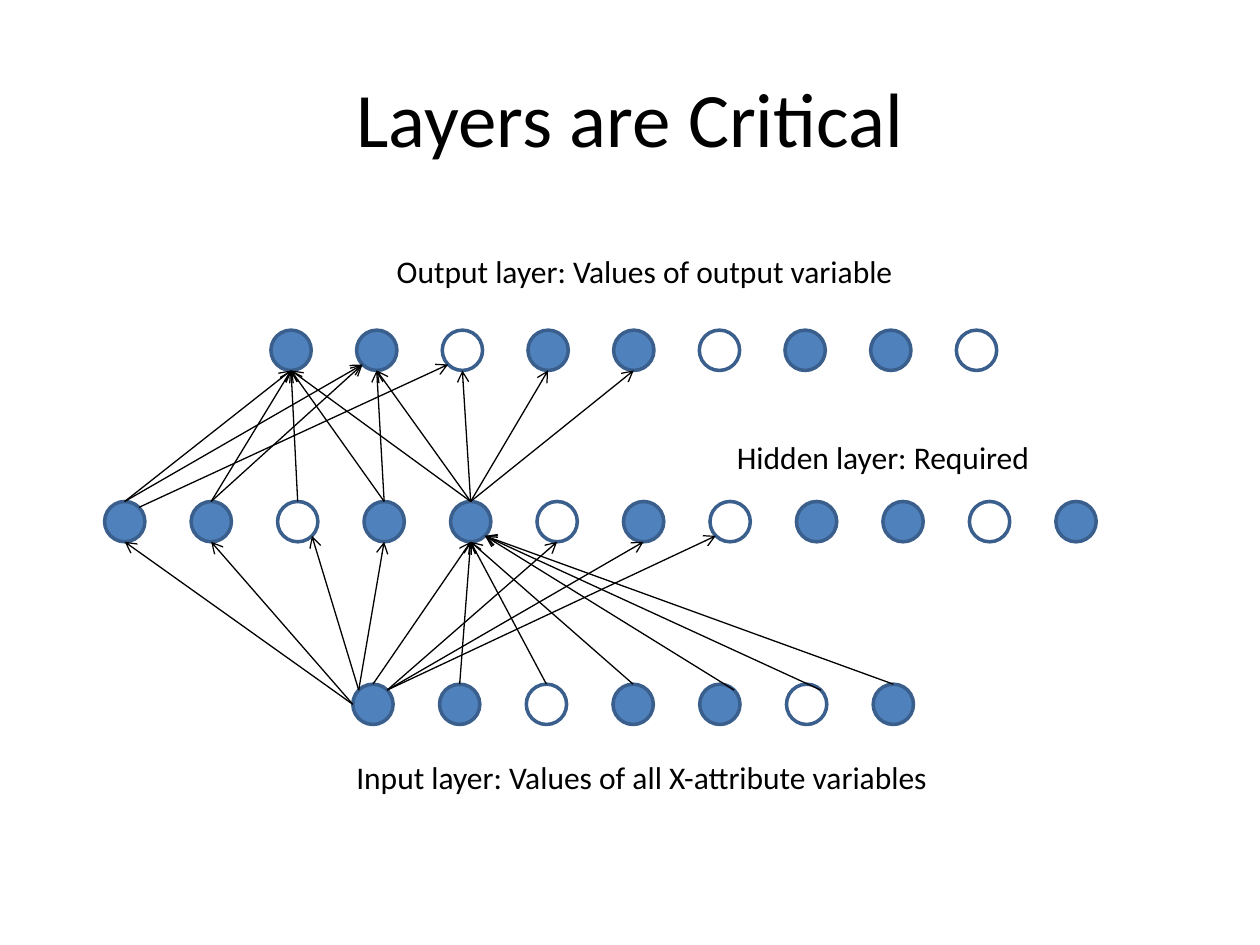
from dataclasses import dataclass
from math import sqrt

from lxml import etree
from pptx import Presentation
from pptx.dml.color import RGBColor
from pptx.enum.shapes import MSO_CONNECTOR, MSO_SHAPE
from pptx.enum.text import MSO_ANCHOR, MSO_AUTO_SIZE, PP_ALIGN
from pptx.oxml.ns import qn
from pptx.util import Inches, Pt

OVAL = MSO_SHAPE.OVAL
STRAIGHT = MSO_CONNECTOR.STRAIGHT
LEFT, CENTER = PP_ALIGN.LEFT, PP_ALIGN.CENTER
MIDDLE, TOP = MSO_ANCHOR.MIDDLE, MSO_ANCHOR.TOP
FIT_SHAPE = MSO_AUTO_SIZE.SHAPE_TO_FIT_TEXT
TITLE_ONLY = 5


@dataclass(frozen=True)
class Theme:
    font: str = "Calibri"
    title_size: float = 44
    label_size: float = 18
    ink: RGBColor = RGBColor(0, 0, 0)
    neuron: RGBColor = RGBColor(0x4F, 0x81, 0xBD)
    rim: RGBColor = RGBColor(0x3A, 0x5F, 0x8C)
    rim_width: float = 2
    link_width: float = 0.75


THEME = Theme()
SLIDE_W, SLIDE_H = 10, 7.5
DIAMETER = 0.32

TITLE = ("Layers are Critical", (0.5, 0.3, 9, 1.25))
LABELS = [
    ("Output layer: Values of output variable", (3.05, 1.95, 4.19, 0.4)),
    ("Input layer: Values of all X-attribute variables", (2.73, 5.97, 4.8, 0.4)),
    ("Hidden layer: Required", (5.75, 3.43, 2.55, 0.4)),
]

# Layer: left of first neuron, left of last neuron, top, neurons (# active, o inactive)
LAYERS = {
    "input": (2.8, 6.93, 5.43, "##o##o#"),
    "hidden": (0.83, 8.38, 3.98, "##o##o#o##o#"),
    "output": (2.15, 7.59, 2.62, "##o##o##o"),
}

# Direction from a neuron's centre to each place on its rim, in radii
DIAGONAL = 1 / sqrt(2)
RIM = {
    "top": (0, -1),
    "bottom": (0, 1),
    "left": (-1, 0),
    "top right": (DIAGONAL, -DIAGONAL),
    "bottom left": (-DIAGONAL, DIAGONAL),
    "bottom right": (DIAGONAL, DIAGONAL),
}

# Lower neuron and its rim place, upper neuron and its rim place
INPUT_TO_HIDDEN = [
    (0, "top", 4, "bottom"),
    (1, "top", 4, "bottom"),
    (2, "top", 4, "bottom"),
    (3, "top", 4, "bottom"),
    (4, "top right", 4, "bottom right"),
    (5, "top right", 4, "bottom right"),
    (6, "top", 4, "bottom right"),
    (0, "left", 1, "bottom"),
    (0, "left", 0, "bottom"),
    (0, "top left", 2, "bottom right"),
    (0, "top left", 3, "bottom"),
    (0, "top right", 5, "bottom"),
    (0, "top right", 6, "bottom"),
    (0, "top right", 7, "bottom left"),
]
RIM["top left"] = (-DIAGONAL, -DIAGONAL)
HIDDEN_TO_OUTPUT = [
    *[(4, "top", target, "bottom") for target in range(5)],
    *[(source, "top", 0, "bottom") for source in (3, 2, 1, 0)],
    (3, "top", 1, "bottom"),
    (0, "top", 1, "bottom left"),
    (1, "top", 1, "bottom left"),
    (0, "top right", 2, "bottom left"),
]
LINKS = [("input", "hidden", INPUT_TO_HIDDEN), ("hidden", "output", HIDDEN_TO_OUTPUT)]


def place(shape, box):
    shape.left, shape.top, shape.width, shape.height = map(Inches, box)


def write(shape, text, *, size, align=LEFT, anchor=TOP, wrap=False, fit=None):
    frame = shape.text_frame
    frame.text = text
    frame.word_wrap = wrap
    frame.vertical_anchor = anchor
    if fit is not None:
        frame.auto_size = fit
    paragraph = frame.paragraphs[0]
    paragraph.alignment = align
    font = paragraph.runs[0].font
    font.name, font.size = THEME.font, Pt(size)
    font.color.rgb = THEME.ink


def neuron_left(layer, index):
    first, last, _, neurons = LAYERS[layer]
    return first + index * (last - first) / (len(neurons) - 1)


def rim_point(layer, index, rim_place):
    radius = DIAMETER / 2
    dx, dy = RIM[rim_place]
    x = neuron_left(layer, index) + radius * (1 + dx)
    y = LAYERS[layer][2] + radius * (1 + dy)
    return Inches(x), Inches(y)


def add_neuron(slide, layer, index, active):
    neuron = slide.shapes.add_shape(OVAL, 0, 0, 0, 0)
    place(neuron, (neuron_left(layer, index), LAYERS[layer][2], DIAMETER, DIAMETER))
    neuron.shadow.inherit = False
    if active:
        neuron.fill.solid()
        neuron.fill.fore_color.rgb = THEME.neuron
    else:
        neuron.fill.background()
    neuron.line.color.rgb = THEME.rim
    neuron.line.width = Pt(THEME.rim_width)


def add_link(slide, start, end):
    link = slide.shapes.add_connector(STRAIGHT, *start, *end)
    link.line.color.rgb = THEME.ink
    link.line.width = Pt(THEME.link_width)
    properties = link._element.spPr
    etree.SubElement(properties.find(qn("a:ln")), qn("a:tailEnd"), type="arrow")
    etree.SubElement(properties, qn("a:effectLst"))


def main():
    deck = Presentation()
    deck.slide_width, deck.slide_height = Inches(SLIDE_W), Inches(SLIDE_H)
    slide = deck.slides.add_slide(deck.slide_layouts[TITLE_ONLY])

    heading, box = TITLE
    place(slide.shapes.title, box)
    write(slide.shapes.title, heading, size=THEME.title_size,
          align=CENTER, anchor=MIDDLE, wrap=True)

    for layer, (_, _, _, neurons) in LAYERS.items():
        for index, state in enumerate(neurons):
            add_neuron(slide, layer, index, state == "#")

    for lower, upper, links in LINKS:
        for source, source_place, target, target_place in links:
            add_link(slide, rim_point(lower, source, source_place),
                     rim_point(upper, target, target_place))

    for label, box in LABELS:
        write(slide.shapes.add_textbox(*map(Inches, box)), label,
              size=THEME.label_size, fit=FIT_SHAPE)

    deck.save("out.pptx")


if __name__ == "__main__":
    main()
